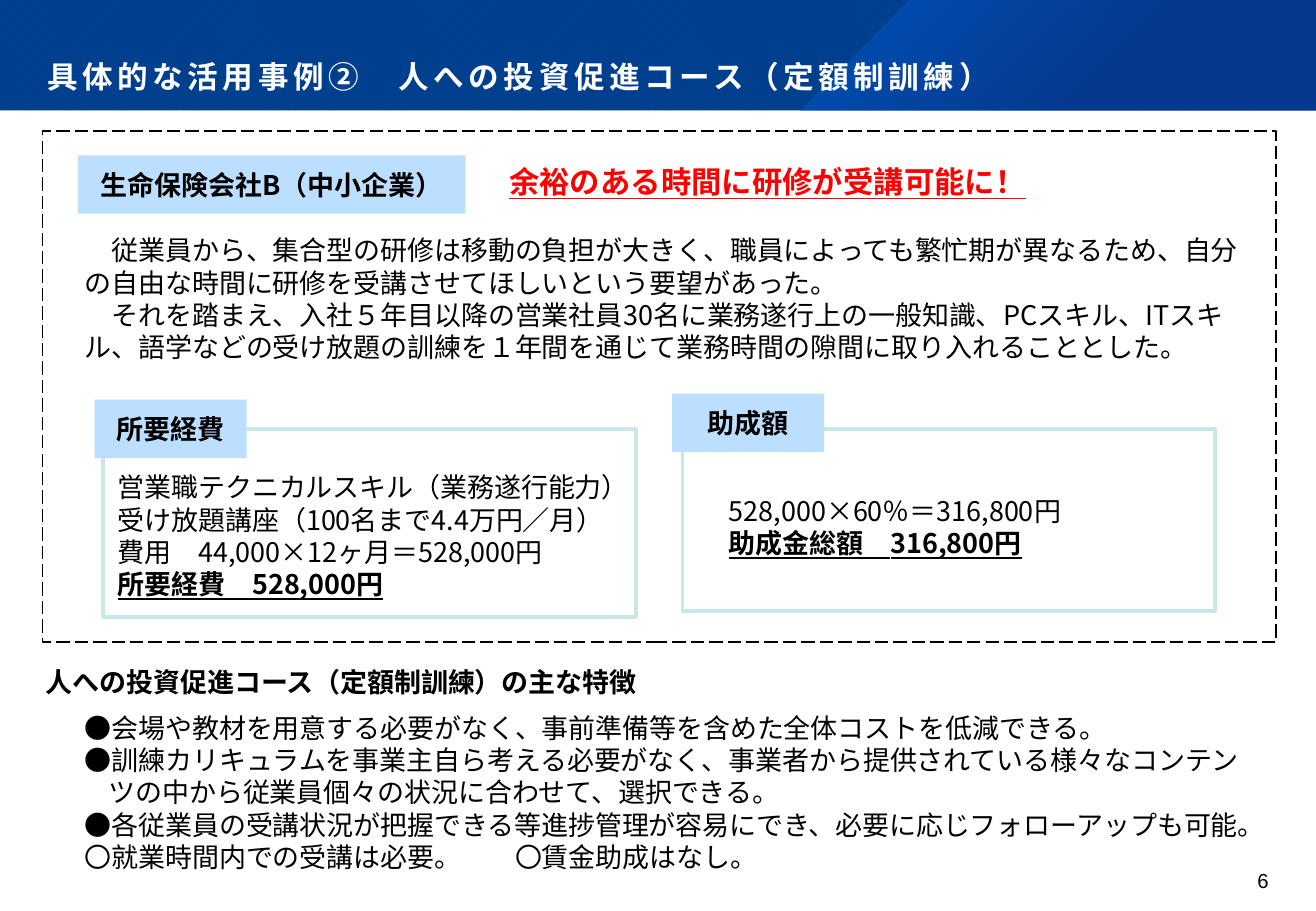
from lxml import etree
from pptx import Presentation
from pptx import util as u
from pptx.dml import color
from pptx.enum import dml, shapes, text
from pptx.oxml import ns, parse_xml

FACE = "Noto Sans CJK JP"
BLACK, PALE, MINT = "000000", "BCDFFF", "C9E7E7"
LEFT, MID, RIGHT = text.PP_ALIGN.LEFT, text.PP_ALIGN.CENTER, text.PP_ALIGN.RIGHT
RECT = shapes.MSO_SHAPE.RECTANGLE


def rgb(code):
    return color.RGBColor.from_string(code)


def place(box):
    return [u.Cm(side) for side in box]


def write(shape, lines, size=16, ink=BLACK, face=FACE, bold=False, line=False,
          align=LEFT, anchor=text.MSO_ANCHOR.MIDDLE, inset=None):
    """Fill a shape with one paragraph per line, all in one style."""
    frame = shape.text_frame
    frame.text = "\n".join(lines)
    frame.word_wrap = True
    frame.vertical_anchor = anchor
    if inset:
        (frame.margin_left, frame.margin_top,
         frame.margin_right, frame.margin_bottom) = place(inset)
    for para in frame.paragraphs:
        para.alignment = align
        for run in para.runs:
            font = run.font
            font.name, font.size = face, u.Pt(size)
            font.bold, font.underline = bold, line
            font.color.rgb = rgb(ink)
            east = etree.SubElement(run._r.get_or_add_rPr(), ns.qn("a:ea"))
            east.set("typeface", FACE)
    return frame.paragraphs


def label(slide, box, lines, **style):
    return write(slide.shapes.add_textbox(*place(box)), lines, **style)


def block(slide, box, fill=None, edge=None, width=1, kind=RECT):
    shape = slide.shapes.add_shape(kind, *place(box))
    shape.shadow.inherit = False
    if fill:
        shape.fill.solid()
        shape.fill.fore_color.rgb = rgb(fill)
    else:
        shape.fill.background()
    if edge:
        shape.line.color.rgb = rgb(edge)
        shape.line.width = u.Pt(width)
    else:
        shape.line.fill.background()
    return shape


def tag(slide, box, name):
    write(block(slide, box, fill=PALE), [name], bold=True, align=MID)


def stress(para):
    for run in para.runs:
        run.font.bold = run.font.underline = True


def glow(shape):
    """Give a shape a see-through gradient that spreads from its top left."""
    shape.fill.background()
    old = shape.fill._xPr.find(ns.qn("a:noFill"))
    stops = "".join(
        f'<a:gs pos="{pos}000"><a:srgbClr val="{code}">'
        f'<a:alpha val="{alpha}000"/></a:srgbClr></a:gs>'
        for pos, code, alpha in [(0, "0064DF", 50), (62, "0C338E", 55)])
    new = parse_xml(
        f'<a:gradFill {ns.nsdecls("a")} rotWithShape="1"><a:gsLst>{stops}</a:gsLst>'
        '<a:path path="circle"><a:fillToRect r="100000" b="100000"/></a:path>'
        '</a:gradFill>')
    old.getparent().replace(old, new)


def banner(slide):
    band = block(slide, (0, 0, 27.51, 2.31))
    band.fill.patterned()
    band.fill.pattern = dml.MSO_PATTERN.DARK_UPWARD_DIAGONAL
    band.fill.fore_color.rgb = rgb("003579")
    band.fill.back_color.rgb = rgb("004292")

    pen = slide.shapes.build_freeform(u.Cm(19.02), u.Cm(0))
    pen.add_line_segments(
        [place(dot) for dot in [(27.51, 0), (27.51, 2.31), (16.71, 2.31)]])
    wedge = pen.convert_to_shape()
    wedge.shadow.inherit = False
    wedge.line.fill.background()
    glow(wedge)

    title = label(slide, (0, 0.43, 27.51, 1.63),
                  ["具体的な活用事例②　人への投資促進コース（定額制訓練）"],
                  size=18.1, ink="FFFFFF", face="Roboto", bold=True,
                  anchor=text.MSO_ANCHOR.BOTTOM, inset=(0.99, 0.91, 0.91, 0.36))[0]
    title.line_spacing = 0.9
    title.runs[0].font._rPr.set("spc", "270")


def case(slide):
    frame = block(slide, (0.89, 2.74, 25.78, 10.69), edge=BLACK)
    frame.line.dash_style = dml.MSO_LINE.LONG_DASH
    tag(slide, (1.63, 3.25, 8.1, 1.22), "生命保険会社B（中小企業）")
    head = block(slide, (10.34, 3.23, 13.79, 1.14),
                 kind=shapes.MSO_SHAPE.ROUNDED_RECTANGLE)
    write(head, ["余裕のある時間に研修が受講可能に！"],
          size=18, ink="FF0000", bold=True, line=True)
    label(slide, (1.52, 4.29, 24.69, 3.91), [
        "　従業員から、集合型の研修は移動の負担が大きく、職員によっても繁忙期が異なるため、"
        "自分の自由な時間に研修を受講させてほしいという要望があった。",
        "　それを踏まえ、入社５年目以降の営業社員30名に業務遂行上の一般知識、PCスキル、"
        "ITスキル、語学などの受け放題の訓練を１年間を通じて業務時間の隙間に取り入れることとした。"])


def panel(slide, frame, body, top, name, lines):
    """Draw a framed sum with its name tag; the last line is stressed."""
    block(slide, frame, edge=MINT, width=2.25)
    tag(slide, (*top, 3.18, 1.22), name)
    stress(label(slide, body, lines)[-1])


def traits(slide):
    label(slide, (0.71, 13.64, 13.39, 1.22),
          ["人への投資促進コース（定額制訓練）の主な特徴"], bold=True)
    paras = label(slide, (1.52, 14.38, 24.92, 4.37), [
        "●会場や教材を用意する必要がなく、事前準備等を含めた全体コストを低減できる。",
        "●訓練カリキュラムを事業主自ら考える必要がなく、事業者から提供されている様々な"
        "コンテンツの中から従業員個々の状況に合わせて、選択できる。",
        "●各従業員の受講状況が把握できる等進捗管理が容易にでき、必要に応じフォローアップも可能。",
        "〇就業時間内での受講は必要。　　〇賃金助成はなし。"])
    props = paras[1]._p.get_or_add_pPr()
    props.set("marL", str(u.Cm(0.5)))
    props.set("indent", str(-u.Cm(0.5)))


def main():
    deck = Presentation()
    deck.slide_width, deck.slide_height = u.Cm(27.51), u.Cm(19.05)
    slide = deck.slides.add_slide(deck.slide_layouts[6])
    banner(slide)
    case(slide)
    panel(slide, (2.16, 8.97, 11.13, 3.94), (2.21, 9.6, 11.33, 3.2),
          (1.98, 8.36), "所要経費",
          ["営業職テクニカルスキル（業務遂行能力）受け放題講座（100名まで4.4万円／月）",
           "費用　44,000×12ヶ月＝528,000円",
           "所要経費　528,000円"])
    panel(slide, (14.27, 8.97, 11.13, 3.81), (14.99, 10.03, 8.69, 1.98),
          (14.05, 8.23), "助成額",
          ["528,000×60％＝316,800円", "助成金総額　316,800円"])
    traits(slide)
    label(slide, (24.77, 18.16, 1.75, 0.76), ["6"], size=12, face="Arial",
          align=RIGHT, anchor=text.MSO_ANCHOR.TOP, inset=(0, 0, 0, 0))
    deck.save("out.pptx")


if __name__ == "__main__":
    main()
